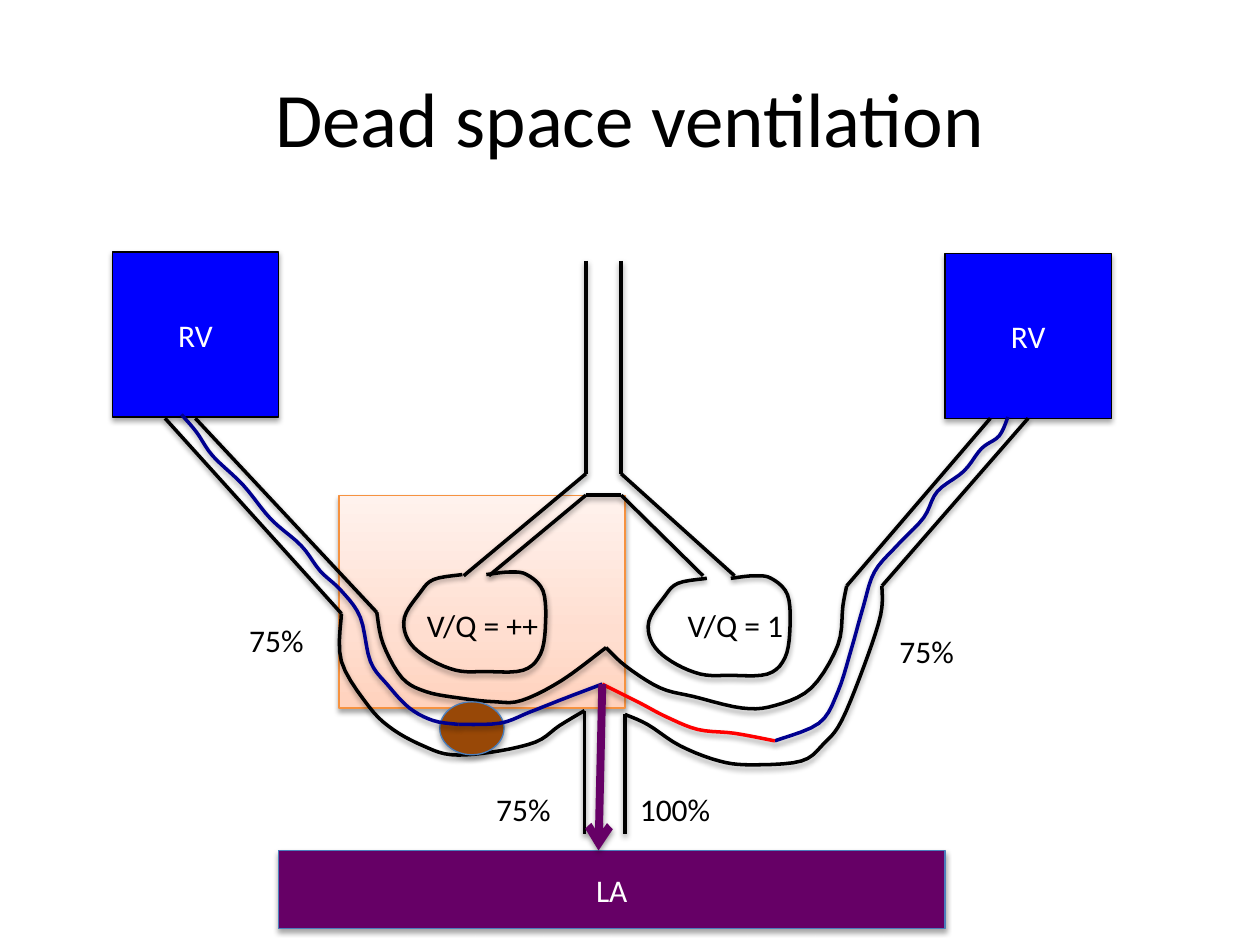
from copy import deepcopy

from lxml import etree
from pptx import Presentation
from pptx import util as u
from pptx.dml.color import RGBColor
from pptx.enum import shapes, text
from pptx.oxml.ns import qn

BLACK = RGBColor(0x00, 0x00, 0x00)
WHITE = RGBColor(0xFF, 0xFF, 0xFF)
BLUE = RGBColor(0x00, 0x00, 0xFF)
NAVY = RGBColor(0x00, 0x00, 0x90)
RED = RGBColor(0xFF, 0x00, 0x00)
PURPLE = RGBColor(0x66, 0x00, 0x66)
BROWN = RGBColor(0x98, 0x48, 0x07)
STEEL = RGBColor(0x4B, 0x7E, 0xBC)
ORANGE = RGBColor(0xF6, 0x92, 0x40)
PEACH = [(0, RGBColor(0xFF, 0xD2, 0xBD)), (0.35, RGBColor(0xFF, 0xDE, 0xD0)),
         (1, RGBColor(0xFF, 0xF2, 0xED))]
FONT = "Calibri"
CURVE_STEPS = 5

TRACHEA_LEFT, TRACHEA_RIGHT = 4.65, 4.93
TRACHEA_TOP, FORK, CARINA, BRONCHUS_END = 2.07, 3.76, 3.93, 4.57
VENTRICLE_BOTTOM, VEIN_BOTTOM, ATRIUM_TOP = 3.32, 6.62, 6.75

LEFT_OUTER, LEFT_INNER = (2.71, 4.87), (2.99, 4.86)
RIGHT_INNER, RIGHT_OUTER = (6.72, 4.65), (7, 4.65)
VEIN_LEFT, VEIN_RIGHT = (4.64, 5.64), (4.96, 5.67)
WALL_PEAK = (4.81, 5.14)
CLOT_EDGE = (3.64, 5.75)
GAS_EXCHANGE = (6.15, 5.88)
MIXING = (4.78, 5.43)

ALVEOLUS = [
    (0.46, 0.02), (0.23, 0.06), (0.12, 0.17), (0, 0.36), (0.03, 0.54),
    (0.18, 0.68), (0.41, 0.78), (0.64, 0.79), (0.94, 0.78), (1.08, 0.65),
    (1.12, 0.41), (1.1, 0.15), (0.97, 0.02), (0.83, 0), (0.65, 0.02),
]
LEFT_OUTER_WALL = [
    LEFT_OUTER, (2.71, 5.25), (2.93, 5.61), (3.12, 5.79), (3.36, 5.92),
    (3.58, 5.99), (3.9, 5.97), (4.25, 5.89), (4.44, 5.76), VEIN_LEFT,
]
LEFT_INNER_WALL = [
    LEFT_INNER, (3.04, 5.11), (3.19, 5.38), (3.38, 5.49), (3.64, 5.54),
    (3.92, 5.57), (4.14, 5.56), (4.46, 5.4), WALL_PEAK,
]
RIGHT_INNER_WALL = [
    WALL_PEAK, (4.97, 5.29), (5.24, 5.46), (5.51, 5.53), (5.89, 5.62),
    (6.15, 5.6), (6.44, 5.46), (6.65, 5.12), (6.69, 4.81), RIGHT_INNER,
]
RIGHT_OUTER_WALL = [
    VEIN_RIGHT, (5.14, 5.75), (5.4, 5.92), (5.71, 6.04), (5.97, 6.07),
    (6.36, 6.04), (6.54, 5.9), (6.68, 5.72), (6.86, 5.28), (6.99, 4.88),
    RIGHT_OUTER,
]
LEFT_FLOW = [
    (1.44, 3.29), (1.56, 3.43), (1.69, 3.62), (1.93, 3.85), (2.15, 4.12),
    (2.39, 4.33), (2.54, 4.53), (2.71, 4.69), (2.86, 4.9), (2.94, 5.25),
    (3.08, 5.44), (3.25, 5.62), (3.44, 5.72), CLOT_EDGE,
]
BLOCKED_FLOW = [CLOT_EDGE, (3.97, 5.74), (4.21, 5.65), (4.49, 5.54), MIXING]
RIGHT_FLOW = [
    (8, 3.31), (7.93, 3.46), (7.79, 3.56), (7.65, 3.74), (7.44, 3.9),
    (7.33, 4.11), (7.12, 4.33), (6.94, 4.54), (6.85, 4.82), (6.76, 5.14),
    (6.65, 5.49), (6.5, 5.74), GAS_EXCHANGE,
]
OXYGENATED_FLOW = [
    GAS_EXCHANGE, (5.83, 5.82), (5.54, 5.79), (5.29, 5.69), (5.08, 5.58), MIXING,
]
LABELS = [
    ("V/Q = ++", 3.29, 4.76, 1.1), ("V/Q = 1", 5.36, 4.76, 0.98),
    ("75%", 1.88, 4.88, 0.64), ("75%", 3.84, 6.22, 0.64),
    ("75%", 7.04, 4.97, 0.64), ("100%", 4.98, 6.22, 0.77),
]


def inches(values):
    return [u.Inches(value) for value in values]


def write(frame, words, size, color, align):
    frame.text = words
    para = frame.paragraphs[0]
    para.alignment = align
    para.font.name = FONT
    para.font.size = u.Pt(size)
    para.font.color.rgb = color


def add_box(page, place, fill, line, words="", kind=shapes.MSO_SHAPE.RECTANGLE):
    box = page.shapes.add_shape(kind, *inches(place))
    box.fill.solid()
    box.fill.fore_color.rgb = fill
    box.line.color.rgb = line
    box.line.width = u.Pt(0.75)
    if words:
        box.text_frame.vertical_anchor = text.MSO_ANCHOR.MIDDLE
        write(box.text_frame, words, 18, WHITE, text.PP_ALIGN.CENTER)
    return box


def add_unperfused_zone(page):
    zone = add_box(page, (2.69, CARINA, 2.27, 1.69), WHITE, ORANGE)
    zone.fill.gradient()
    zone.fill.gradient_angle = 90
    stops = zone.element.spPr.find(qn("a:gradFill")).find(qn("a:gsLst"))
    stops.append(deepcopy(stops[-1]))
    for stop, (position, color) in zip(zone.fill.gradient_stops, PEACH):
        stop.position = position
        stop.color.rgb = color


def add_line(page, start, end, color=BLACK, width=2):
    line = page.shapes.add_connector(
        shapes.MSO_CONNECTOR.STRAIGHT, *inches(start + end))
    line.line.color.rgb = color
    line.line.width = u.Pt(width)
    return line


def add_arrow(page, start, end):
    arrow = add_line(page, start, end, PURPLE, 4.5)
    etree.SubElement(arrow.line._get_or_add_ln(), qn("a:tailEnd"), type="arrow")


def spline(before, start, end, after, t):
    return 0.5 * (2 * start + (end - before) * t
                  + (2 * before - 5 * start + 4 * end - after) * t ** 2
                  + (3 * start - before - 3 * end + after) * t ** 3)


def smooth(anchors):
    padded = [anchors[0], *anchors, anchors[-1]]
    points = [anchors[0]]
    for window in zip(padded, padded[1:], padded[2:], padded[3:]):
        for step in range(1, CURVE_STEPS + 1):
            points.append(tuple(spline(*axis, step / CURVE_STEPS)
                                for axis in zip(*window)))
    return points


def add_curve(page, anchors, color=BLACK):
    start, *rest = [inches(point) for point in smooth(anchors)]
    builder = page.shapes.build_freeform(*start)
    builder.add_line_segments(rest, close=False)
    curve = builder.convert_to_shape()
    curve.fill.background()
    curve.line.color.rgb = color
    curve.line.width = u.Pt(2)


def add_airway(page):
    sides = ((TRACHEA_LEFT, 3.68, 3.88), (TRACHEA_RIGHT, 5.83, 5.58))
    for x, upper_end, lower_end in sides:
        add_line(page, (x, TRACHEA_TOP), (x, FORK))
        add_line(page, (x, FORK), (upper_end, BRONCHUS_END))
        add_line(page, (x, CARINA), (lower_end, BRONCHUS_END))
    add_line(page, (TRACHEA_LEFT, CARINA), (TRACHEA_RIGHT, CARINA))


def add_alveoli(page):
    for left, top in ((3.21, 4.54), (5.15, 4.57)):
        add_curve(page, [(left + x, top + y) for x, y in ALVEOLUS])


def add_vessels(page):
    arteries = ((1.31, LEFT_OUTER), (1.55, LEFT_INNER),
                (7.86, RIGHT_INNER), (8.16, RIGHT_OUTER))
    for x, end in arteries:
        add_line(page, (x, VENTRICLE_BOTTOM), end)
    for wall in (LEFT_OUTER_WALL, LEFT_INNER_WALL, RIGHT_INNER_WALL, RIGHT_OUTER_WALL):
        add_curve(page, wall)
    for top in (VEIN_LEFT, VEIN_RIGHT):
        add_line(page, top, (top[0], VEIN_BOTTOM))


def add_blood_flow(page):
    for flow in (LEFT_FLOW, RIGHT_FLOW, BLOCKED_FLOW):
        add_curve(page, flow, NAVY)
    add_curve(page, OXYGENATED_FLOW, RED)
    add_arrow(page, MIXING, (4.75, ATRIUM_TOP))


def add_label(page, words, left, top, width):
    box = page.shapes.add_textbox(*inches((left, top, width, 0.4)))
    box.text_frame.word_wrap = False
    box.text_frame.auto_size = text.MSO_AUTO_SIZE.SHAPE_TO_FIT_TEXT
    write(box.text_frame, words, 18, BLACK, text.PP_ALIGN.LEFT)


def set_title(page, words):
    title = page.shapes.title
    title.left, title.top, title.width, title.height = inches((0.5, 0.3, 9, 1.25))
    title.text_frame.vertical_anchor = text.MSO_ANCHOR.MIDDLE
    write(title.text_frame, words, 44, BLACK, text.PP_ALIGN.CENTER)


def main():
    deck = Presentation()
    deck.slide_width, deck.slide_height = inches((10, 7.5))
    page = deck.slides.add_slide(deck.slide_layouts[5])
    set_title(page, "Dead space ventilation")
    add_unperfused_zone(page)
    add_airway(page)
    add_alveoli(page)
    for left, top in ((0.89, 2), (7.5, 2.01)):
        add_box(page, (left, top, 1.32, 1.31), BLUE, BLACK, "RV")
    add_vessels(page)
    add_box(page, (3.49, 5.57, 0.51, 0.42), BROWN, STEEL, kind=shapes.MSO_SHAPE.OVAL)
    add_box(page, (2.21, ATRIUM_TOP, 5.29, 0.62), PURPLE, STEEL, "LA")
    add_blood_flow(page)
    for label in LABELS:
        add_label(page, *label)
    deck.save("out.pptx")


if __name__ == "__main__":
    main()
